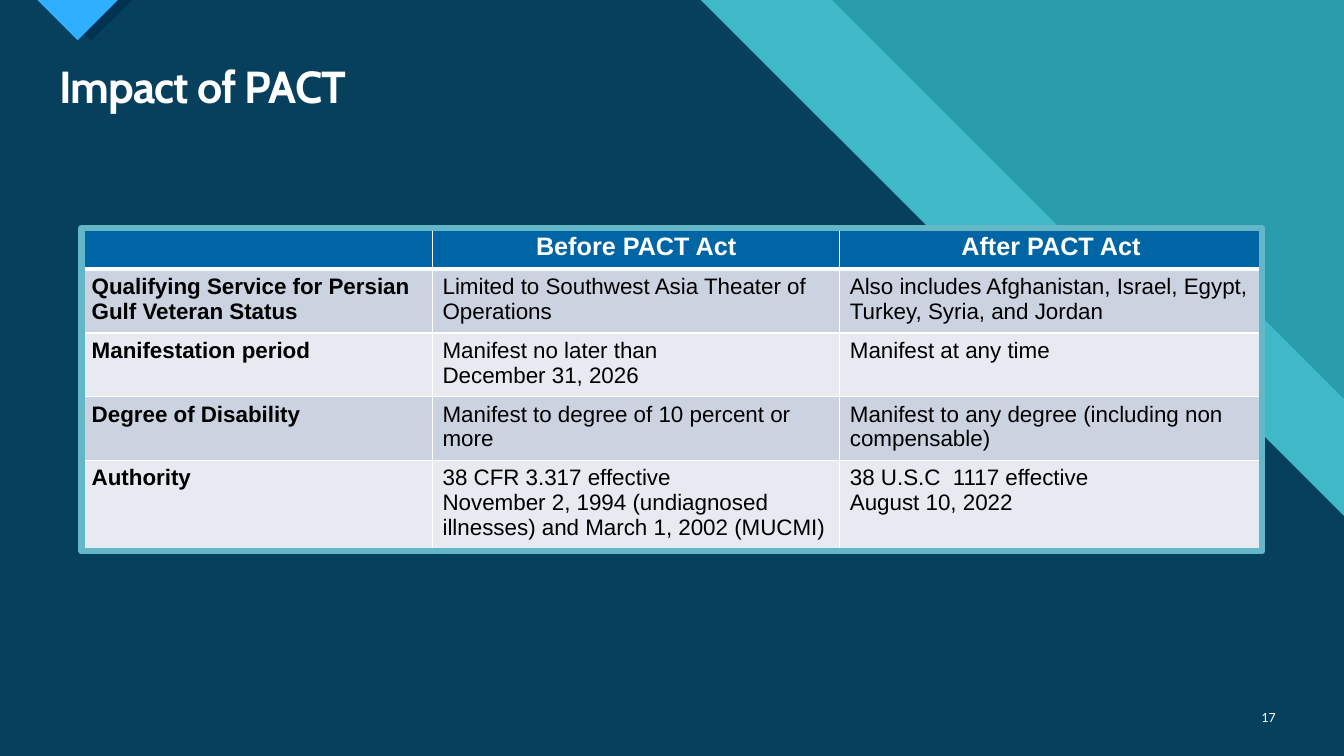
import dataclasses

import pptx
import pptx.dml.color
import pptx.enum.shapes
import pptx.enum.text
import pptx.oxml
import pptx.oxml.ns
import pptx.util

Inches = pptx.util.Inches
ALIGN = pptx.enum.text.PP_ALIGN
ANCHOR = pptx.enum.text.MSO_ANCHOR
NS = pptx.oxml.ns.nsdecls("a")


@dataclasses.dataclass(frozen=True)
class Theme:
    teal: str = "299CAB"
    aqua: str = "47C3D3"
    navy: str = "003352"
    sky: str = "2FAFFF"
    frame: str = "63B7C6"
    header: str = "0065A4"
    bands: tuple = ("CCD3E0", "E7EAF0")
    white: str = "FFFFFF"
    black: str = "000000"
    title_font: str = "Cabin"
    table_font: str = "Arial"
    number_font: str = "Calibri"
    title_size: float = 32
    header_size: float = 18
    body_size: float = 16
    number_size: float = 10


def rgb(color):
    return pptx.dml.color.RGBColor.from_string(color)


class Deck:
    def __init__(self, theme):
        self.theme = theme
        self.prs = pptx.Presentation()
        self.prs.slide_width = Inches(13.33)
        self.prs.slide_height = Inches(7.5)
        self.s = self.prs.slides.add_slide(self.prs.slide_layouts[5])

    def background(self, color):
        fill = self.s.background.fill
        fill.solid()
        fill.fore_color.rgb = rgb(color)

    def style(self, p, font, size, color, bold=False, align=ALIGN.LEFT):
        p.alignment = align
        p.font.name = font
        p.font.size = pptx.util.Pt(size)
        p.font.bold = bold
        p.font.color.rgb = rgb(color)

    def polygon(self, points, color, opacity=100):
        points = [(Inches(x), Inches(y)) for x, y in points]
        builder = self.s.shapes.build_freeform(*points[0])
        builder.add_line_segments(points[1:], close=True)
        sp = builder.convert_to_shape()
        sp.shadow.inherit = False
        sp.line.fill.background()
        sp.fill.solid()
        sp.fill.fore_color.rgb = rgb(color)
        if opacity < 100:
            clr = sp.element.spPr.find(".//" + pptx.oxml.ns.qn("a:srgbClr"))
            clr.append(pptx.oxml.parse_xml(f'<a:alpha {NS} val="{opacity * 1000}"/>'))

    def title(self, text, left, top, width, height):
        sp = self.s.shapes.title
        sp.element.getparent().append(sp.element)  # above the backdrop
        sp.left, sp.top, sp.width, sp.height = map(Inches, (left, top, width, height))
        tf = sp.text_frame
        tf.text = text
        tf.vertical_anchor = ANCHOR.MIDDLE
        p = tf.paragraphs[0]
        p.line_spacing = 0.9
        self.style(p, self.theme.title_font, self.theme.title_size, self.theme.white, True)
        p.runs[0].font._element.set("spc", "-70")

    def number(self, text, left, top, width, height):
        sp = self.s.shapes.add_textbox(*map(Inches, (left, top, width, height)))
        tf = sp.text_frame
        tf.word_wrap = True
        tf.vertical_anchor = ANCHOR.MIDDLE
        tf.text = text
        self.style(tf.paragraphs[0], self.theme.number_font, self.theme.number_size,
                   self.theme.white, align=ALIGN.RIGHT)

    def borders(self, cell, widths):
        tcPr = cell._tc.get_or_add_tcPr()
        for side, width in widths.items():
            tcPr.append(pptx.oxml.parse_xml(
                f'<a:ln{side} {NS} w="{pptx.util.Pt(width)}"><a:solidFill>'
                f'<a:srgbClr val="{self.theme.white}"/></a:solidFill></a:ln{side}>'))

    def table(self, rows, left, top, widths, heights):
        t = self.theme
        table = self.s.shapes.add_table(
            len(rows), len(widths), Inches(left), Inches(top),
            Inches(sum(widths)), Inches(sum(heights))).table
        for column, width in zip(table.columns, widths):
            column.width = Inches(width)
        for i, texts in enumerate(rows):
            table.rows[i].height = Inches(heights[i])
            is_header = i == 0
            for j, text in enumerate(texts):
                cell = table.cell(i, j)
                self.borders(cell, {"L": 1, "R": 1, "T": 3 if i == 1 else 1,
                                    "B": 3 if is_header else 1})
                cell.fill.solid()
                cell.fill.fore_color.rgb = rgb(t.header if is_header else t.bands[(i - 1) % 2])
                cell.text = text
                p = cell.text_frame.paragraphs[0]
                if is_header:
                    self.style(p, t.table_font, t.header_size, t.white, True, ALIGN.CENTER)
                else:
                    self.style(p, t.table_font, t.body_size, t.black, j == 0)

    def frame(self, left, top, width, height):
        sp = self.s.shapes.add_shape(pptx.enum.shapes.MSO_SHAPE.RECTANGLE,
                                     *map(Inches, (left, top, width, height)))
        sp.shadow.inherit = False
        sp.fill.background()
        sp.line.color.rgb = rgb(self.theme.frame)
        sp.line.width = pptx.util.Pt(4.5)


ROWS = [
    ("", "Before PACT Act", "After PACT Act"),
    ("Qualifying Service for Persian Gulf Veteran Status",
     "Limited to Southwest Asia Theater of Operations",
     "Also includes Afghanistan, Israel, Egypt, Turkey, Syria, and Jordan"),
    ("Manifestation period", "Manifest no later than \vDecember 31, 2026",
     "Manifest at any time"),
    ("Degree of Disability", "Manifest to degree of 10 percent or more",
     "Manifest to any degree (including non compensable)"),
    ("Authority",
     "38 CFR 3.317 effective \vNovember 2, 1994 (undiagnosed illnesses) "
     "and March 1, 2002 (MUCMI)",
     "38 U.S.C  1117 effective \vAugust 10, 2022"),
]


def main():
    theme = Theme()
    deck = Deck(theme)

    # Diagonal backdrop
    deck.background(theme.teal)
    deck.polygon([(0, 0), (8.25, 0), (11.22, 2.97), (12.34, 2.97), (13.33, 3.96),
                  (13.33, 7.5), (0, 7.5)], theme.aqua, 74)
    deck.polygon([(0, 0), (6.95, 0), (9.92, 2.97), (11.18, 2.97), (13.33, 5.12),
                  (13.33, 7.5), (0, 7.5)], theme.navy, 90)

    # Corner marker and its shade
    deck.polygon([(0.48, 0), (1.31, 0), (0.9, 0.41)], theme.navy)
    deck.polygon([(0.37, 0), (1.17, 0), (0.77, 0.4)], theme.sky)

    # Title and slide number
    deck.title("Impact of PACT", 0.49, 0.59, 12.26, 0.59)
    deck.number("17", 12.31, 6.91, 0.44, 0.4)

    # Comparison table in its frame
    left, top = 0.81, 2.26
    widths = (3.48, 4.04, 4.19)
    deck.table(ROWS, left, top, widths, (0.41, 0.59, 0.59, 0.59, 0.84))
    deck.frame(left, top, sum(widths), 3.21)

    deck.prs.save("out.pptx")


if __name__ == "__main__":
    main()
